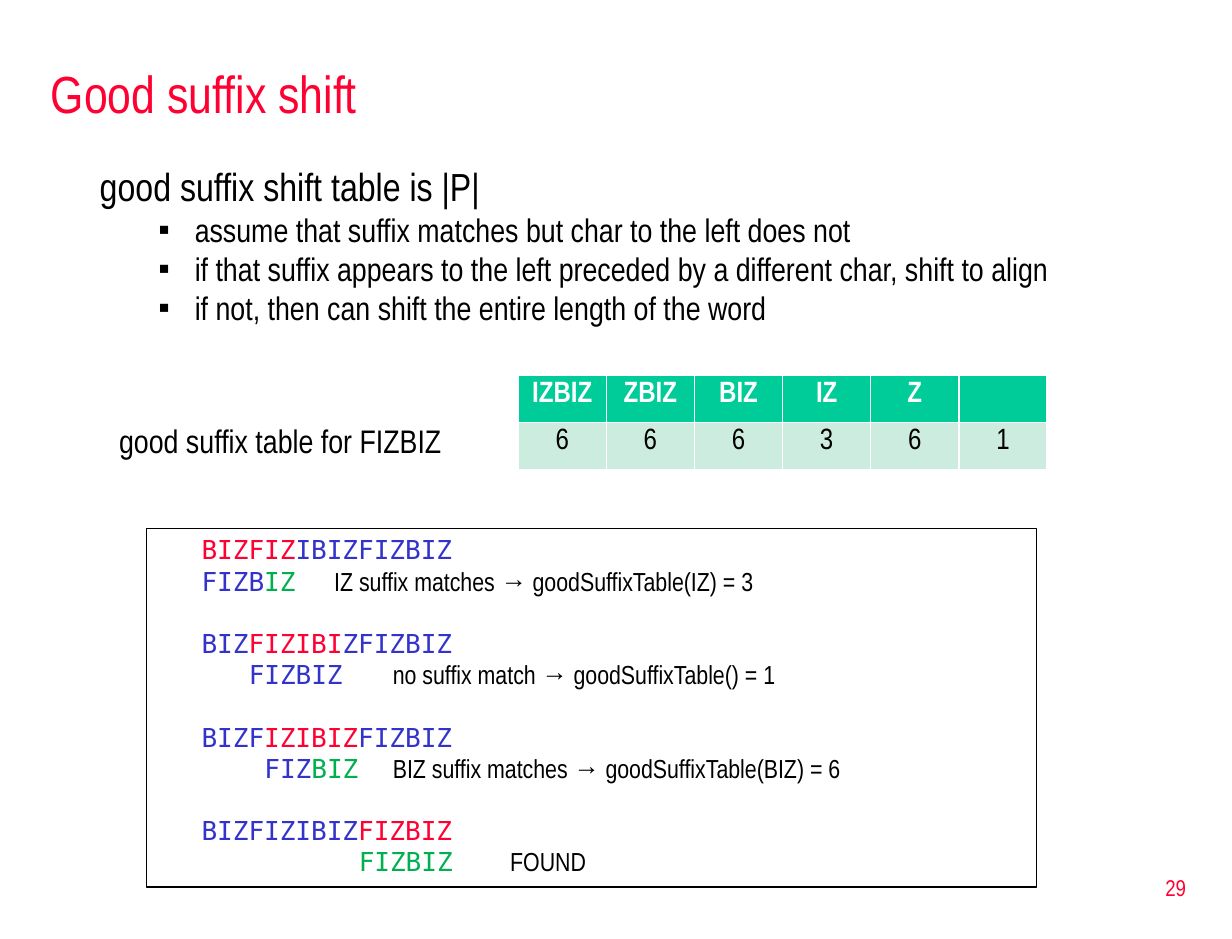
from lxml.etree import SubElement
from pptx import Presentation
from pptx.dml.color import RGBColor
from pptx.enum.shapes import MSO_SHAPE
from pptx.enum.text import MSO_ANCHOR, MSO_AUTO_SIZE, PP_ALIGN
from pptx.oxml.ns import qn
from pptx.util import Inches, Pt

LEFT, MID, RIGHT = PP_ALIGN.LEFT, PP_ALIGN.CENTER, PP_ALIGN.RIGHT
TOP, CENTER = MSO_ANCHOR.TOP, MSO_ANCHOR.MIDDLE
FIXED = MSO_AUTO_SIZE.NONE
RECT = MSO_SHAPE.RECTANGLE

SANS, MONO = "Arial Narrow", "DejaVu Sans Mono"
RED, BLUE, GREEN = "FF0033", "3333CC", "00B050"
BLACK, WHITE = "000000", "FFFFFF"
HEAD, CELL = "00CC99", "CBECDE"
WIDE, HIGH = 10.5, 8
COLS, ROWS = 126, 96
GLYPH = 0.134

WORD, TEXT = "FIZBIZ", "BIZFIZIBIZFIZBIZ"
POINTS = [
    "assume that suffix matches but char to the left does not",
    "if that suffix appears to the left preceded by a different char, shift to align",
    "if not, then can shift the entire length of the word",
]
SHIFTS = [("IZBIZ", 6), ("ZBIZ", 6), ("BIZ", 6), ("IZ", 3), ("Z", 6), ("", 1)]
STEPS = [
    (0, 2, "IZ suffix matches → goodSuffixTable(IZ) = 3"),
    (3, 0, "no suffix match → goodSuffixTable() = 1"),
    (4, 3, "BIZ suffix matches → goodSuffixTable(BIZ) = 6"),
    (10, 6, "FOUND"),
]


def color(code):
    return RGBColor.from_string(code)


def grid(col, row, wide, high):
    return (Inches(col * WIDE / COLS), Inches(row * HIGH / ROWS),
            Inches(wide * WIDE / COLS), Inches(high * HIGH / ROWS))


class Deck:
    def __init__(self):
        self.prs = Presentation()
        self.prs.slide_width = Inches(WIDE)
        self.prs.slide_height = Inches(HIGH)
        self.slide = self.prs.slides.add_slide(self.prs.slide_layouts[1])

    def style(self, para, size, code=BLACK, bold=False, align=LEFT):
        para.alignment = align
        font = para.font
        font.name, font.size, font.bold = SANS, Pt(size), bold
        font.color.rgb = color(code)

    def indent(self, para, left, first):
        props = para._p.get_or_add_pPr()
        props.set("marL", str(Inches(left)))
        props.set("indent", str(Inches(first)))
        return props

    def frame(self, shape, anchor):
        frame = shape.text_frame
        frame.word_wrap = True
        frame.auto_size = FIXED
        frame.vertical_anchor = anchor
        return frame

    def place(self, shape, area):
        shape.left, shape.top, shape.width, shape.height = grid(*area)

    def title(self, text, area):
        shape = self.slide.shapes.title
        self.place(shape, area)
        para = self.frame(shape, CENTER).paragraphs[0]
        para.text = text
        self.style(para, 32, RED)

    def body(self, lead, points, area):
        shape = self.slide.placeholders[1]
        self.place(shape, area)
        frame = self.frame(shape, TOP)
        para = frame.paragraphs[0]
        para.text = lead
        SubElement(self.indent(para, 0.38, -0.38), qn("a:buNone"))
        para.space_before = Pt(5.8)
        self.style(para, 24)
        for point in points:
            para = frame.add_paragraph()
            para.text, para.level = point, 1
            props = self.indent(para, 0.81, -0.31)
            SubElement(props, qn("a:buChar")).set("char", "▪")
            para.line_spacing, para.space_before = 0.8, Pt(4.8)
            self.style(para, 20)

    def label(self, text, area, size, code=BLACK, align=LEFT, anchor=TOP):
        shape = self.slide.shapes.add_textbox(*grid(*area))
        para = self.frame(shape, anchor).paragraphs[0]
        para.text = text
        self.style(para, size, code, align=align)

    def table(self, pairs, area):
        shape = self.slide.shapes.add_table(2, len(pairs), *grid(*area))
        for col, pair in enumerate(pairs):
            for row, value in enumerate(pair):
                cell = shape.table.cell(row, col)
                cell.fill.solid()
                cell.fill.fore_color.rgb = color(CELL if row else HEAD)
                cell.text = str(value)
                self.style(cell.text_frame.paragraphs[0], 18,
                           BLACK if row else WHITE, not row, MID)

    def line(self, para, shift, parts):
        props = self.indent(para, 0, 0.37 + shift * GLYPH)
        tab = SubElement(SubElement(props, qn("a:tabLst")), qn("a:tab"))
        tab.set("pos", str(Inches(2.74)))
        tab.set("algn", "l")
        para.alignment = LEFT
        para.font.size = Pt(16)
        for text, name, code in parts:
            if text:
                run = para.add_run()
                run.text, run.font.name = text, name
                run.font.color.rgb = color(code)

    def trace(self, steps, area):
        shape = self.slide.shapes.add_shape(RECT, *grid(*area))
        shape.shadow.inherit = False
        shape.fill.background()
        shape.line.color.rgb = color(BLACK)
        shape.line.width = Pt(0.75)
        frame = self.frame(shape, TOP)
        for step, (shift, match, note) in enumerate(steps):
            para = frame.add_paragraph() if step else frame.paragraphs[0]
            para.space_before = Pt(19 if step else 0)
            end, cut = shift + len(WORD), len(WORD) - match
            self.line(para, 0, [(TEXT[:shift], MONO, BLUE),
                                (TEXT[shift:end], MONO, RED),
                                (TEXT[end:], MONO, BLUE)])
            self.line(frame.add_paragraph(), shift,
                      [(WORD[:cut], MONO, BLUE), (WORD[cut:], MONO, GREEN),
                       ("\t" + note, SANS, BLACK)])


def main():
    deck = Deck()
    deck.title("Good suffix shift", (4, 5, 119, 9))
    deck.body("good suffix shift table is |P|", POINTS, (9, 16, 114.25, 13))
    deck.label("29", (96.25, 87.5, 26.25, 6.4), 14, RED, RIGHT, CENTER)
    deck.table(SHIFTS, (53, 38.4, 54.1, 9.6))
    deck.label("good suffix table for FIZBIZ", (11, 42.4, 36, 5.3), 20)
    deck.trace(STEPS, (15, 54, 91, 36.7))
    deck.prs.save("out.pptx")


if __name__ == "__main__":
    main()
